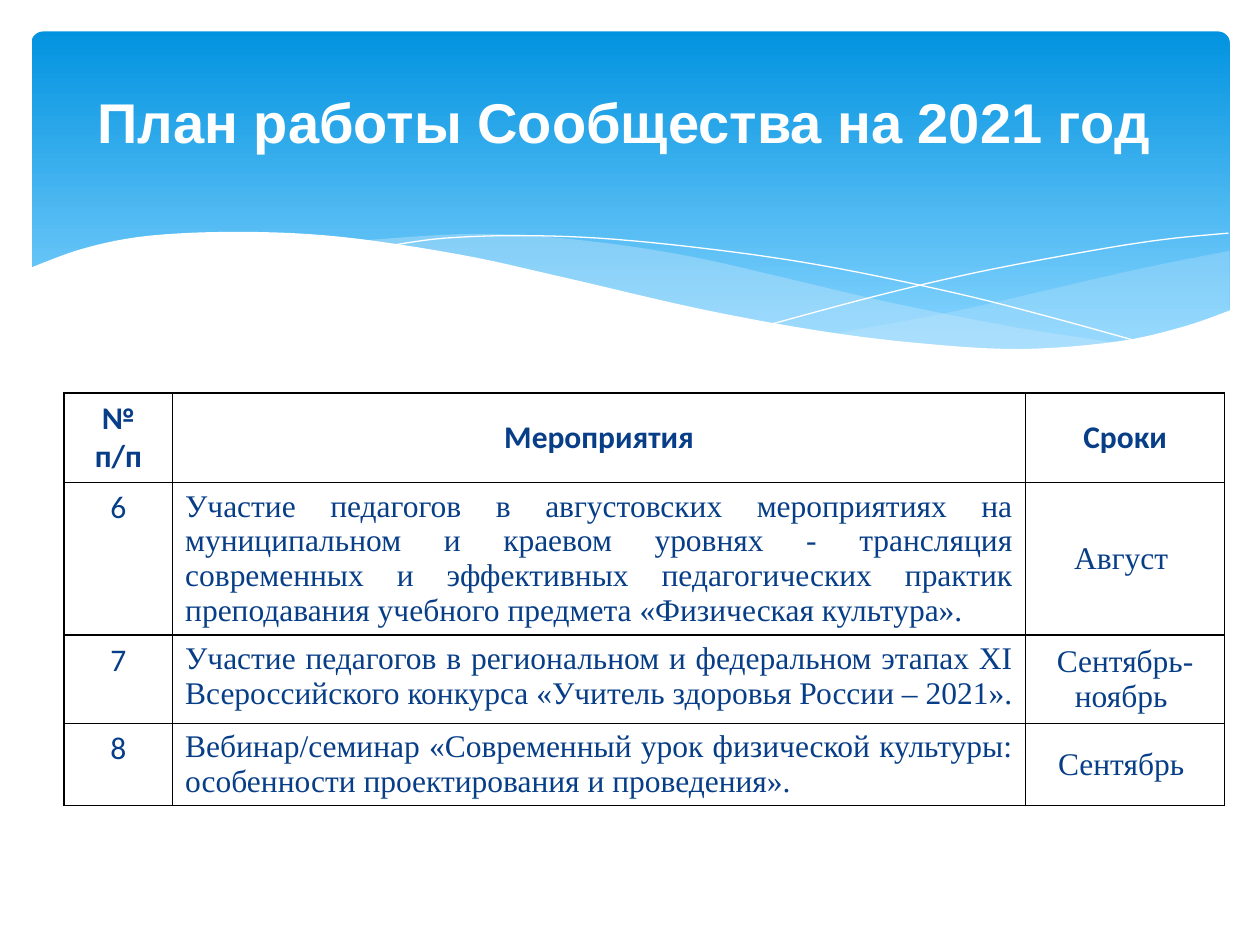
"""Build the yearly plan slide: a blue wave banner, a title and a table."""
from dataclasses import dataclass

from lxml import etree
from pptx import Presentation
from pptx import util as u
from pptx.dml.color import RGBColor
from pptx.enum import shapes, text
from pptx.oxml.ns import qn


@dataclass(frozen=True)
class Theme:
    """Colours, fonts, type sizes and the grid cell of the slide."""
    deep: str = "0293E0"
    light: str = "83D3FE"
    mist: str = "C6E7FC"
    white: str = "FFFFFF"
    ink: str = "073E87"
    rule: str = "000000"
    head: str = "Arial"
    sans: str = "Calibri"
    serif: str = "Times New Roman"
    title: int = 32
    body: int = 18
    cell: int = u.Inches(1)


T = Theme()
LEFT, MID, JUST = text.PP_ALIGN.LEFT, text.PP_ALIGN.CENTER, text.PP_ALIGN.JUSTIFY
TOP, HALF = text.MSO_ANCHOR.TOP, text.MSO_ANCHOR.MIDDLE

FAR = [(9.76, 1.99), (9.06, 2.13), (8.32, 2.3), (7.53, 2.48), (6.61, 2.65)]
FAR_BACK = [(6.61, 2.65), (7.32, 2.74), (8.03, 2.78), (8.72, 2.74),
            (9.28, 2.63), (9.76, 2.47)]
NEAR = [(8.93, 2.73), (8.07, 2.6), (7.06, 2.4), (6.29, 2.22), (5.55, 2.05),
        (4.89, 1.94), (4.2, 1.87), (3.61, 1.86), (2.86, 1.91)]
NEAR_BACK = [(2.86, 1.91), (3.62, 2.03), (4.49, 2.22), (5.3, 2.4), (6.18, 2.58),
             (6.95, 2.7), (7.61, 2.77), (8.28, 2.78), (8.93, 2.73)]
FALL = [(3.09, 1.95), (3.53, 1.89), (4.16, 1.87), (4.89, 1.9), (5.82, 2),
        (6.65, 2.13), (7.6, 2.33), (8.31, 2.51), (9.07, 2.72)]
RISE = [(6.13, 2.57), (6.95, 2.35), (7.76, 2.16), (8.66, 1.99), (9.24, 1.9),
        (9.75, 1.85)]
CREST = [(0.23, 2.13), (0.67, 1.97), (1.19, 1.87), (1.93, 1.84), (2.71, 1.88),
         (3.65, 2.02), (4.47, 2.2), (5.55, 2.45), (6.47, 2.62), (7.26, 2.72),
         (8.09, 2.77), (8.87, 2.71), (9.4, 2.59), (9.77, 2.46)]
BASE = [(9.77, 3.29), (0.23, 3.29)]

COLS = [0.86, 6.77, 1.58]
ROWS = [0.71, 1.21, 0.7, 0.65]
PLAN = [
    ("№ п/п", "Мероприятия", "Сроки"),
    ("6", "Участие педагогов в августовских мероприятиях на муниципальном и "
     "краевом уровнях - трансляция современных и эффективных педагогических "
     "практик преподавания учебного предмета «Физическая культура». ", "Август "),
    ("7", "Участие педагогов в региональном и федеральном этапах XI "
     "Всероссийского конкурса «Учитель здоровья России – 2021». ",
     "Сентябрь- ноябрь "),
    ("8", "Вебинар/семинар «Современный урок физической культуры: особенности "
     "проектирования и проведения». ", "Сентябрь "),
]


def span(*counts):
    """Turn counts of grid cells into lengths."""
    return [round(n * T.cell) for n in counts]


def tint(code):
    """Give the colour for a hex code."""
    return RGBColor.from_string(code)


def curve(knots, steps=6):
    """Lay a smooth Catmull-Rom curve through the knots."""
    ends = [knots[0], *knots, knots[-1]]
    dots = [knots[0]]
    for a, b, c, d in zip(ends, ends[1:], ends[2:], ends[3:]):
        for i in range(1, steps + 1):
            t = i / steps
            dots.append(tuple(
                q + t / 2 * (r - p + t * (2 * p - 5 * q + 4 * r - s
                                          + t * (3 * (q - r) + s - p)))
                for p, q, r, s in zip(a, b, c, d)))
    return dots


def trace(group, dots, close):
    """Draw a plain outline through the dots."""
    first, *rest = [span(*dot) for dot in dots]
    pen = group.shapes.build_freeform(*first)
    pen.add_line_segments(rest, close=close)
    shape = pen.convert_to_shape()
    shape.shadow.inherit = False
    return shape


def wave(group, dots, code, share=100):
    """Draw a filled wave with the given share of opacity."""
    shape = trace(group, dots, True)
    shape.line.fill.background()
    shape.fill.solid()
    shape.fill.fore_color.rgb = tint(code)
    if share < 100:
        tone = shape._element.spPr.find(".//" + qn("a:srgbClr"))
        etree.SubElement(tone, qn("a:alpha"), val=str(share * 1000))


def thread(group, knots):
    """Draw a white hairline along the knots."""
    shape = trace(group, curve(knots), False)
    shape.fill.background()
    shape.line.color.rgb = tint(T.white)
    shape.line.width = u.Pt(0)


def banner(slide):
    """Draw the blue panel and the waves across its foot."""
    panel = slide.shapes.add_shape(shapes.MSO_SHAPE.ROUNDED_RECTANGLE,
                                   *span(0.25, 0.25, 9.51, 2.7))
    panel.adjustments[0] = 0.034
    panel.shadow.inherit = False
    panel.line.fill.background()
    panel.fill.gradient()
    panel.fill.gradient_angle = 270
    stops = zip(panel.fill.gradient_stops, [(0, T.deep), (0.9, T.light)])
    for stop, (place, code) in stops:
        stop.position = place
        stop.color.rgb = tint(code)
    group = slide.shapes.add_group_shape()
    wave(group, curve(FAR) + curve(FAR_BACK), T.mist, 29)
    wave(group, curve(NEAR) + curve(NEAR_BACK), T.mist, 40)
    thread(group, FALL)
    thread(group, RISE)
    wave(group, curve(CREST) + BASE, T.white)


def write(frame, words, font, size, code, bold, align):
    """Set one paragraph of text and format it."""
    frame.text = words
    line = frame.paragraphs[0]
    line.alignment = align
    face = line.runs[0].font
    face.name, face.size, face.bold = font, u.Pt(size), bold
    face.color.rgb = tint(code)
    return line


def heading(slide, words):
    """Place the title in front of the banner."""
    title = slide.shapes.title
    title.left, title.top, title.width, title.height = span(0.27, 0.28, 9.37, 1.37)
    frame = title.text_frame
    frame.auto_size = text.MSO_AUTO_SIZE.NONE
    frame.vertical_anchor = HALF
    write(frame, words, T.head, T.title, T.white, True, MID)
    slide.shapes._spTree.append(title._element)


def border(cell):
    """Rule all four sides of a cell."""
    props = cell._tc.get_or_add_tcPr()
    for i, side in enumerate("LRTB"):
        edge = etree.Element(qn("a:ln" + side), w=str(u.Pt(1)))
        fill = etree.SubElement(edge, qn("a:solidFill"))
        etree.SubElement(fill, qn("a:srgbClr"), val=T.rule)
        props.insert(i, edge)


def table(slide, left, top):
    """Build the table of events and dates."""
    grid = slide.shapes.add_table(len(ROWS), len(COLS), *span(
        left, top, sum(COLS), sum(ROWS))).table
    grid.first_row = grid.horz_banding = False
    for col, width in zip(grid.columns, span(*COLS)):
        col.width = width
    for row, height in zip(grid.rows, span(*ROWS)):
        row.height = height
    for r, words in enumerate(PLAN):
        for c, word in enumerate(words):
            cell = grid.cell(r, c)
            head = r == 0
            cell.fill.background()
            border(cell)
            cell.vertical_anchor = HALF if head or c == 2 else TOP
            line = write(cell.text_frame, word, T.sans if head or c == 0 else T.serif,
                         T.body, T.ink, head, JUST if c == 1 and not head else MID)
            if c == 0 and not head:
                line.space_before = u.Pt(T.body * 0.2)


def main():
    """Build and save the slide."""
    deck = Presentation()
    deck.slide_width, deck.slide_height = span(10, 7.5)
    slide = deck.slides.add_slide(deck.slide_layouts.get_by_name("Title Only"))
    banner(slide)
    heading(slide, "План работы Сообщества на 2021 год")
    table(slide, 0.51, 3.12)
    deck.save("out.pptx")


if __name__ == "__main__":
    main()
